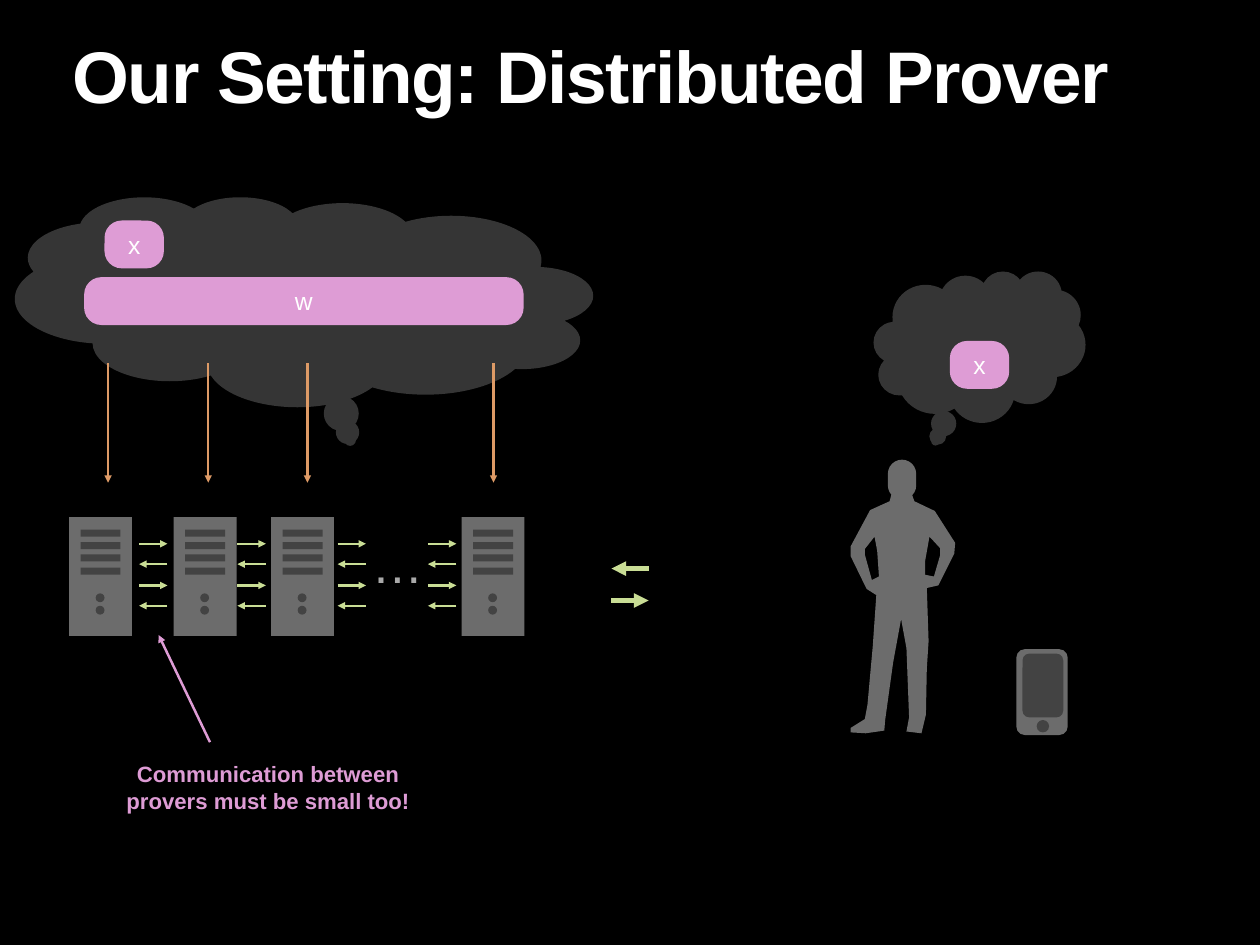
from dataclasses import dataclass
from typing import Optional

from pptx import Presentation
from pptx.dml.color import RGBColor
from pptx.enum.shapes import MSO_CONNECTOR, MSO_SHAPE as Preset
from pptx.enum.text import MSO_ANCHOR as Anchor, PP_ALIGN as Align
from pptx.oxml.ns import qn
from pptx.shapes.autoshape import Shape
from pptx.shapes.shapetree import GroupShapes, SlideShapes
from pptx.slide import Slide
from pptx.text.text import TextFrame
from pptx.util import Pt
from lxml import etree

PX = 9144
FONT = "Arial"
BLACK = RGBColor(0x00, 0x00, 0x00)
WHITE = RGBColor(0xFF, 0xFF, 0xFF)
GRAY = RGBColor(0x6C, 0x6C, 0x6C)
DARK_GRAY = RGBColor(0x43, 0x43, 0x43)
CLOUD_GRAY = RGBColor(0x35, 0x35, 0x35)
LIGHT_GRAY = RGBColor(0xA9, 0xA9, 0xA9)
PINK = RGBColor(0xDE, 0x9C, 0xD5)
GREEN = RGBColor(0xC9, 0xDD, 0x95)
ORANGE = RGBColor(0xDD, 0x9A, 0x66)

Shapes = SlideShapes | GroupShapes
Contour = tuple[tuple[int, int], ...]


@dataclass(frozen=True)
class Box:
    left: int
    top: int
    width: int
    height: int

    def emu(self) -> tuple[int, int, int, int]:
        return self.left * PX, self.top * PX, self.width * PX, self.height * PX


@dataclass(frozen=True)
class Label:
    text: str
    size: float
    color: RGBColor
    bold: bool = False
    align: Align = Align.CENTER
    anchor: Anchor = Anchor.MIDDLE
    line_spacing: Optional[float] = None
    tracking: int = 0


@dataclass(frozen=True)
class Part:
    preset: Preset
    box: Box
    color: RGBColor
    adjustments: tuple[float, ...] = ()
    label: Optional[Label] = None
    mirrored: bool = False


@dataclass(frozen=True)
class Arrow:
    start: tuple[int, int]
    end: tuple[int, int]
    color: RGBColor
    weight: int = 2


SERVER_LEFTS = (78, 196, 306, 521)
INPUT_XS = (122, 235, 347, 557)
LINK_LEFTS = (157, 268, 381, 483)

TITLE = Label("Our Setting: Distributed Prover", 59.4, WHITE, True, Align.LEFT, Anchor.TOP, 0.8, -120)
NOTE = Label("Communication between provers must be small too!", 18, PINK, True)
STATEMENT = Label("x", 20, WHITE)
WITNESS = Label("w", 20, WHITE)

THOUGHTS = (
    Part(Preset.CLOUD_CALLOUT, Box(17, 222, 652, 237), CLOUD_GRAY, (-0.08, 0.66), mirrored=True),
    Part(Preset.ROUNDED_RECTANGLE, Box(118, 249, 67, 54), PINK, (0.36,), STATEMENT),
    Part(Preset.ROUNDED_RECTANGLE, Box(95, 313, 496, 54), PINK, (0.36,), WITNESS),
    Part(Preset.CLOUD_CALLOUT, Box(986, 306, 239, 171), CLOUD_GRAY),
    Part(Preset.ROUNDED_RECTANGLE, Box(1072, 385, 67, 54), PINK, (0.36,), STATEMENT),
)
PHONE = (
    Part(Preset.ROUNDED_RECTANGLE, Box(1147, 733, 58, 97), GRAY),
    Part(Preset.ROUNDED_RECTANGLE, Box(1154, 738, 46, 72), DARK_GRAY),
    Part(Preset.OVAL, Box(1170, 813, 14, 14), DARK_GRAY),
)

HEAD = Part(Preset.ROUNDED_RECTANGLE, Box(1002, 519, 32, 45), GRAY, (0.5,))
BODY: Contour = (
    (1007, 555), (1004, 566), (982, 576), (960, 617), (960, 628), (978, 665), (989, 672), (985, 730),
    (979, 796), (976, 812), (960, 822), (960, 827), (977, 828), (998, 825), (999, 813), (1008, 748),
    (1017, 699), (1023, 732), (1026, 810), (1023, 826), (1040, 828), (1045, 807), (1046, 755), (1048, 724),
    (1046, 664), (1059, 661), (1077, 625), (1078, 613), (1055, 577), (1032, 566), (1028, 555),
)
ARM_GAPS: tuple[Contour, ...] = (
    ((1049, 606), (1061, 619), (1061, 627), (1054, 651), (1044, 649), (1044, 634)),
    ((987, 606), (976, 620), (976, 626), (984, 655), (992, 651), (990, 622)),
)


def write_label(frame: TextFrame, label: Label) -> None:
    frame.word_wrap = True
    frame.vertical_anchor = label.anchor
    frame.margin_left = frame.margin_right = frame.margin_top = frame.margin_bottom = 6 * PX
    paragraph = frame.paragraphs[0]
    paragraph.alignment = label.align
    paragraph.line_spacing = label.line_spacing
    run = paragraph.add_run()
    run.text = label.text
    run.font.name = FONT
    run.font.size = Pt(label.size)
    run.font.bold = label.bold
    run.font.color.rgb = label.color
    if label.tracking:
        run.font._element.set("spc", str(label.tracking))


def add_text(shapes: Shapes, box: Box, label: Label) -> None:
    write_label(shapes.add_textbox(*box.emu()).text_frame, label)


def paint(shape: Shape, color: RGBColor) -> None:
    shape.shadow.inherit = False
    shape.fill.solid()
    shape.fill.fore_color.rgb = color
    shape.line.fill.background()


def add_part(shapes: Shapes, part: Part) -> None:
    shape = shapes.add_shape(part.preset, *part.box.emu())
    paint(shape, part.color)
    for index, value in enumerate(part.adjustments):
        shape.adjustments[index] = value
    if part.mirrored:
        shape._element.spPr.xfrm.set("flipH", "1")
    if part.label:
        write_label(shape.text_frame, part.label)


def add_arrow(shapes: Shapes, arrow: Arrow) -> None:
    ends = [value * PX for value in (*arrow.start, *arrow.end)]
    connector = shapes.add_connector(MSO_CONNECTOR.STRAIGHT, *ends)
    connector.line.color.rgb = arrow.color
    connector.line.width = Pt(arrow.weight)
    etree.SubElement(connector.line._get_or_add_ln(), qn("a:tailEnd"), type="triangle")
    etree.SubElement(connector._element.spPr, qn("a:effectLst"))


def add_server(slide: Slide, left: int) -> None:
    shapes = slide.shapes.add_group_shape().shapes
    add_part(shapes, Part(Preset.RECTANGLE, Box(left, 584, 71, 134), GRAY))
    for row in range(4):
        add_part(shapes, Part(Preset.RECTANGLE, Box(left + 13, 598 + row * 43 // 3, 45, 8), DARK_GRAY))
    for top in (670, 684):
        add_part(shapes, Part(Preset.OVAL, Box(left + 30, top, 10, 10), DARK_GRAY))


def add_links(slide: Slide, left: int) -> None:
    for row in range(4):
        y = round(614 + row * 70 / 3)
        ends = (left, y), (left + 32, y)
        start, end = ends if row % 2 == 0 else ends[::-1]
        add_arrow(slide.shapes, Arrow(start, end, GREEN))


def add_verifier(slide: Slide) -> None:
    builder = slide.shapes.build_freeform(*BODY[0], scale=PX)
    builder.add_line_segments(BODY[1:])
    for gap in ARM_GAPS:
        builder.move_to(*gap[0])
        builder.add_line_segments(gap[1:])
    paint(builder.convert_to_shape(), GRAY)
    add_part(slide.shapes, HEAD)


def main() -> None:
    presentation = Presentation()
    presentation.slide_width, presentation.slide_height = 1422 * PX, 1067 * PX
    slide = presentation.slides.add_slide(presentation.slide_layouts[6])
    slide.background.fill.solid()
    slide.background.fill.fore_color.rgb = BLACK
    for left in SERVER_LEFTS:
        add_server(slide, left)
    add_text(slide.shapes, Box(341, 595, 215, 80), Label("…", 42, LIGHT_GRAY))
    add_text(slide.shapes, Box(76, 48, 1269, 111), TITLE)
    add_verifier(slide)
    for part in THOUGHTS + PHONE:
        add_part(slide.shapes, part)
    add_arrow(slide.shapes, Arrow((732, 642), (690, 642), GREEN, 4))
    add_arrow(slide.shapes, Arrow((690, 678), (732, 678), GREEN, 4))
    for x in INPUT_XS:
        add_arrow(slide.shapes, Arrow((x, 410), (x, 545), ORANGE))
    for left in LINK_LEFTS:
        add_links(slide, left)
    add_text(slide.shapes, Box(122, 853, 361, 72), NOTE)
    add_arrow(slide.shapes, Arrow((237, 838), (179, 717), PINK))
    presentation.save("out.pptx")


if __name__ == "__main__":
    main()
